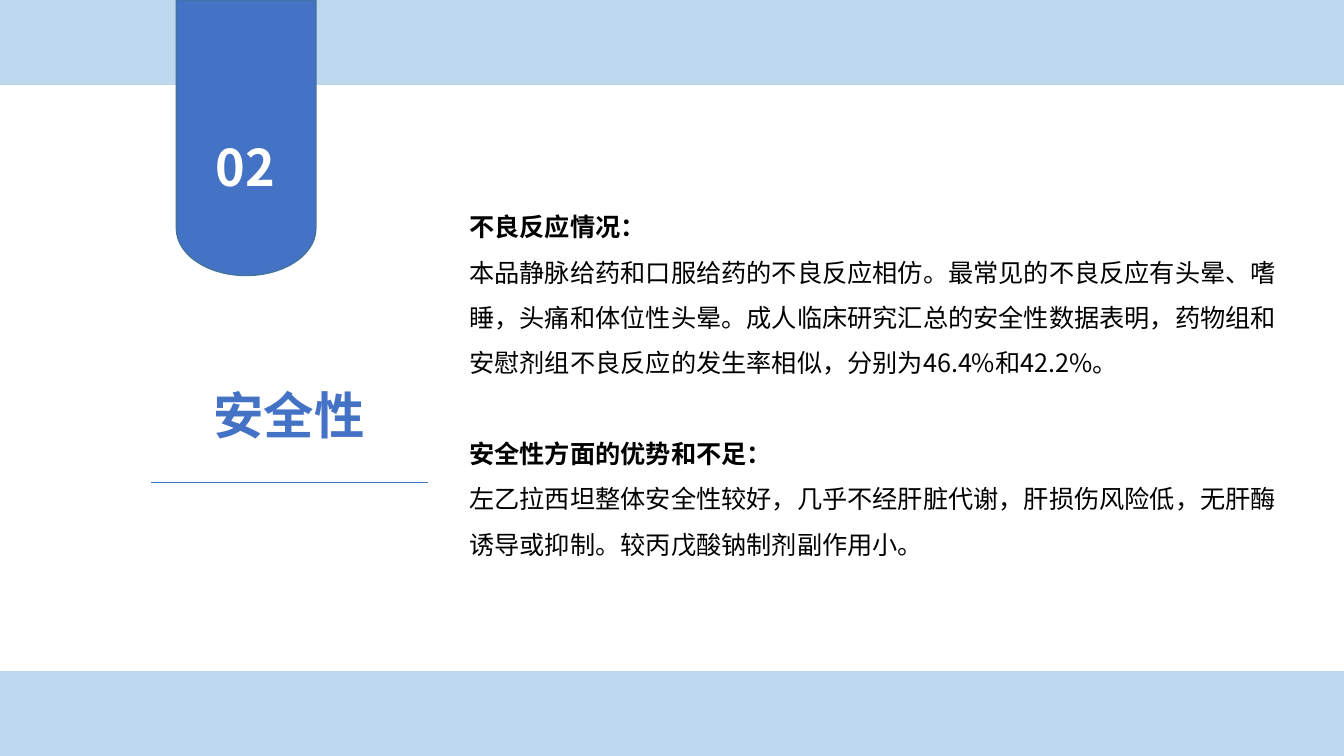
"""Build the safety section slide on a grid of 16 columns by 9 rows."""
import math
from dataclasses import dataclass

import pptx
import pptx.dml.color
import pptx.enum.shapes
import pptx.enum.text
import pptx.oxml
import pptx.oxml.ns
import pptx.shapes.autoshape
import pptx.slide
import pptx.util

COLUMNS = 16
ROWS = 9
SLIDE_WIDTH = pptx.util.Inches(13.33)
SLIDE_HEIGHT = pptx.util.Inches(7.5)

PALE_BLUE = pptx.dml.color.RGBColor(0xBD, 0xD7, 0xEE)
BLUE = pptx.dml.color.RGBColor(0x44, 0x72, 0xC4)
EDGE_BLUE = pptx.dml.color.RGBColor(0x43, 0x73, 0x9E)
WHITE = pptx.dml.color.RGBColor(0xFF, 0xFF, 0xFF)
BLACK = pptx.dml.color.RGBColor(0, 0, 0)

CHINESE_FONT = "Noto Sans CJK SC"
LATIN_FONT = "Calibri"
CENTER = pptx.enum.text.PP_ALIGN.CENTER
LEFT = pptx.enum.text.PP_ALIGN.LEFT


@dataclass(frozen=True)
class Area:
    column: float
    row: float
    columns: float
    rows: float

    def lengths(self) -> tuple[int, int, int, int]:
        return (across(self.column), down(self.row),
                across(self.columns), down(self.rows))


@dataclass(frozen=True)
class Paragraph:
    text: str
    bold: bool = True
    space_before: float = 0


@dataclass(frozen=True)
class TextBlock:
    area: Area
    paragraphs: tuple[Paragraph, ...]
    size: float
    color: pptx.dml.color.RGBColor
    font: str = CHINESE_FONT
    alignment: pptx.enum.text.PP_ALIGN = CENTER
    line_spacing: float = 1.0
    wrap: bool = True
    fill: pptx.dml.color.RGBColor | None = None


BANDS = (Area(0, 0, COLUMNS, 1), Area(0, ROWS - 1, COLUMNS, 1))
RIBBON = Area(2.1, 0, 1.66, 3.28)
RIBBON_CURVE_ROWS = 0.56
ARC_STEPS = 48
RULE = Area(1.8, 5.74, 3.29, 0)

TEXT_BLOCKS = (
    TextBlock(Area(2.41, 1.56, 1.03, 0.85), (Paragraph("02"),), 36, WHITE,
              fill=BLUE),
    TextBlock(
        Area(5.47, 2.28, 10.06, 4.48),
        (
            Paragraph("不良反应情况："),
            Paragraph("本品静脉给药和口服给药的不良反应相仿。最常见的不良反应有头晕、"
                      "嗜睡，头痛和体位性头晕。成人临床研究汇总的安全性数据表明，"
                      "药物组和安慰剂组不良反应的发生率相似，分别为46.4%和42.2%。", False),
            Paragraph("安全性方面的优势和不足：", space_before=32.4),
            Paragraph("左乙拉西坦整体安全性较好，几乎不经肝脏代谢，肝损伤风险低，"
                      "无肝酶诱导或抑制。较丙戊酸钠制剂副作用小。", False),
        ),
        18, BLACK, alignment=LEFT, line_spacing=1.5),
    TextBlock(Area(2.42, 4.51, 2.04, 0.85), (Paragraph("安全性"),), 36, BLUE,
              font=LATIN_FONT, wrap=False),
)


def across(columns: float) -> int:
    """Convert grid columns to a slide length."""
    return round(SLIDE_WIDTH * columns / COLUMNS)


def down(rows: float) -> int:
    """Convert grid rows to a slide length."""
    return round(SLIDE_HEIGHT * rows / ROWS)


def paint(shape: pptx.shapes.autoshape.Shape, fill: pptx.dml.color.RGBColor,
          edge: pptx.dml.color.RGBColor) -> None:
    """Give a shape a flat fill and a one-point edge."""
    shape.shadow.inherit = False
    shape.fill.solid()
    shape.fill.fore_color.rgb = fill
    shape.line.color.rgb = edge
    shape.line.width = pptx.util.Pt(1)


def draw_band(page: pptx.slide.Slide, area: Area) -> None:
    """Draw a pale band across the page."""
    band = page.shapes.add_shape(
        pptx.enum.shapes.MSO_SHAPE.RECTANGLE, *area.lengths())
    paint(band, PALE_BLUE, PALE_BLUE)


def draw_ribbon(page: pptx.slide.Slide, area: Area) -> None:
    """Draw the hanging ribbon, which ends in half an ellipse."""
    left, top, width, height = area.lengths()
    radius = width / 2
    drop = down(RIBBON_CURVE_ROWS)
    angles = [math.pi * step / ARC_STEPS for step in range(ARC_STEPS + 1)]
    arc = [(round(left + radius * (1 + math.cos(angle))),
            round(top + height - drop + drop * math.sin(angle)))
           for angle in angles]
    builder = page.shapes.build_freeform(left, top)
    builder.add_line_segments([(left + width, top), *arc], close=True)
    paint(builder.convert_to_shape(), BLUE, EDGE_BLUE)


def draw_text(page: pptx.slide.Slide, block: TextBlock) -> None:
    """Draw a text block with one format per paragraph."""
    box = page.shapes.add_textbox(*block.area.lengths())
    if block.fill is not None:
        box.fill.solid()
        box.fill.fore_color.rgb = block.fill
    frame = box.text_frame
    frame.word_wrap = block.wrap
    frame.text = "\n".join(item.text for item in block.paragraphs)
    for para, item in zip(frame.paragraphs, block.paragraphs):
        para.alignment = block.alignment
        para.line_spacing = block.line_spacing
        para.space_before = pptx.util.Pt(item.space_before)
        for span in para.runs:
            span.font.name = block.font
            span.font.size = pptx.util.Pt(block.size)
            span.font.bold = item.bold
            span.font.color.rgb = block.color
            east_asian = pptx.oxml.parse_xml(
                f'<a:ea {pptx.oxml.ns.nsdecls("a")} typeface="{CHINESE_FONT}"/>')
            span.font._element.append(east_asian)


def draw_rule(page: pptx.slide.Slide, area: Area) -> None:
    """Draw the thin rule below the section title."""
    left, top, width, height = area.lengths()
    rule = page.shapes.add_connector(
        pptx.enum.shapes.MSO_CONNECTOR.STRAIGHT,
        left, top, left + width, top + height)
    rule.line.color.rgb = BLUE
    rule.line.width = pptx.util.Pt(0.5)
    rule._element.spPr.append(pptx.oxml.parse_xml(
        f'<a:effectLst {pptx.oxml.ns.nsdecls("a")}/>'))


def main() -> None:
    """Build and save the deck."""
    deck = pptx.Presentation()
    deck.slide_width = SLIDE_WIDTH
    deck.slide_height = SLIDE_HEIGHT
    page = deck.slides.add_slide(deck.slide_layouts[6])
    for band in BANDS:
        draw_band(page, band)
    draw_ribbon(page, RIBBON)
    for block in TEXT_BLOCKS:
        draw_text(page, block)
    draw_rule(page, RULE)
    deck.save("out.pptx")


if __name__ == "__main__":
    main()
